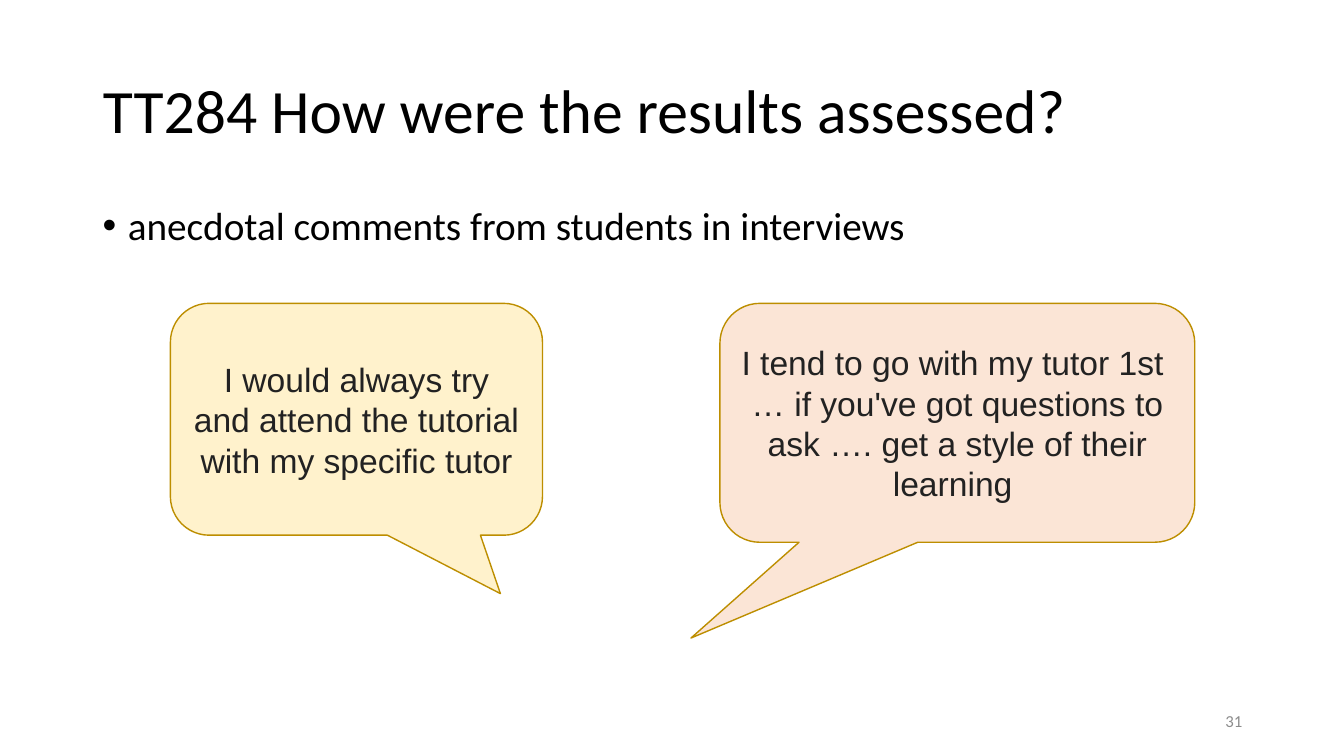
from pptx import Presentation
from pptx.util import Inches, Pt
from pptx.dml.color import RGBColor
from pptx.enum.shapes import MSO_SHAPE as Shape
from pptx.enum.text import PP_ALIGN as Align, MSO_ANCHOR as Anchor
from pptx.oxml.ns import qn
from lxml import etree

BLACK = RGBColor(0x00, 0x00, 0x00)
INK = RGBColor(0x22, 0x22, 0x22)
GREY = RGBColor(0x8C, 0x8C, 0x8C)
GOLD = RGBColor(0xBD, 0x8E, 0x00)
CREAM = RGBColor(0xFF, 0xF2, 0xCC)
PEACH = RGBColor(0xFB, 0xE5, 0xD6)


def write(frame, text, size=24, font="Calibri", color=BLACK, align=Align.LEFT,
          anchor=Anchor.MIDDLE, leading=1.0, before=0, bullet=False):
    """Fill a text frame, one paragraph per line of text."""
    frame.word_wrap = True
    frame.vertical_anchor = anchor
    for i, line in enumerate(text.split("\n")):
        para = frame.add_paragraph() if i else frame.paragraphs[0]
        para.alignment = align
        para.line_spacing = leading
        para.space_before = Pt(before)
        run = para.add_run()
        run.text = line
        run.font.size = Pt(size)
        run.font.name = font
        run.font.color.rgb = color
        if bullet:
            props = para._p.get_or_add_pPr()
            props.set("marL", str(Inches(0.25)))
            props.set("indent", str(-Inches(0.25)))
            etree.SubElement(props, qn("a:buFont")).set("typeface", "Arial")
            etree.SubElement(props, qn("a:buChar")).set("char", "•")


class Deck:
    def __init__(self):
        self.prs = Presentation()
        self.prs.slide_width = Inches(13.33)
        self.prs.slide_height = Inches(7.5)
        self.slide = self.prs.slides.add_slide(self.prs.slide_layouts[5])

    def title(self, text, box):
        shape = self.slide.shapes.title
        shape.left, shape.top, shape.width, shape.height = map(Inches, box)
        write(shape.text_frame, text, size=44, leading=0.9)

    def label(self, text, box, **style):
        shape = self.slide.shapes.add_textbox(*map(Inches, box))
        write(shape.text_frame, text, **style)

    def quote(self, text, box, fill, tip):
        shape = self.slide.shapes.add_shape(
            Shape.ROUNDED_RECTANGULAR_CALLOUT, *map(Inches, box))
        shape.shadow.inherit = False
        shape.adjustments[0], shape.adjustments[1] = tip
        shape.adjustments[2] = 0.167
        shape.fill.solid()
        shape.fill.fore_color.rgb = fill
        shape.line.color.rgb = GOLD
        shape.line.width = Pt(1)
        write(shape.text_frame, text, font="Arial", color=INK,
              align=Align.CENTER)


def main():
    deck = Deck()

    # Heading and bullet
    deck.title("TT284 How were the results assessed?", (0.92, 0.4, 11.5, 1.45))
    deck.label("anecdotal comments from students in interviews",
               (0.92, 2, 11.89, 4.76), size=28, anchor=Anchor.TOP,
               leading=0.9, before=10, bullet=True)

    # Student quotes
    deck.quote("I would always try and attend the tutorial with my specific tutor",
               (1.69, 3.01, 3.69, 2.3), CREAM, (0.387, 0.752))
    deck.quote("I tend to go with my tutor 1st \n"
               "… if you've got questions to ask …. get a style of their learning ",
               (7.14, 3.01, 4.71, 2.37), PEACH, (-0.561, 0.901))

    # Slide number
    deck.label("31", (9.42, 6.95, 3, 0.4), size=12, color=GREY,
               align=Align.RIGHT)

    deck.prs.save("out.pptx")


if __name__ == "__main__":
    main()
